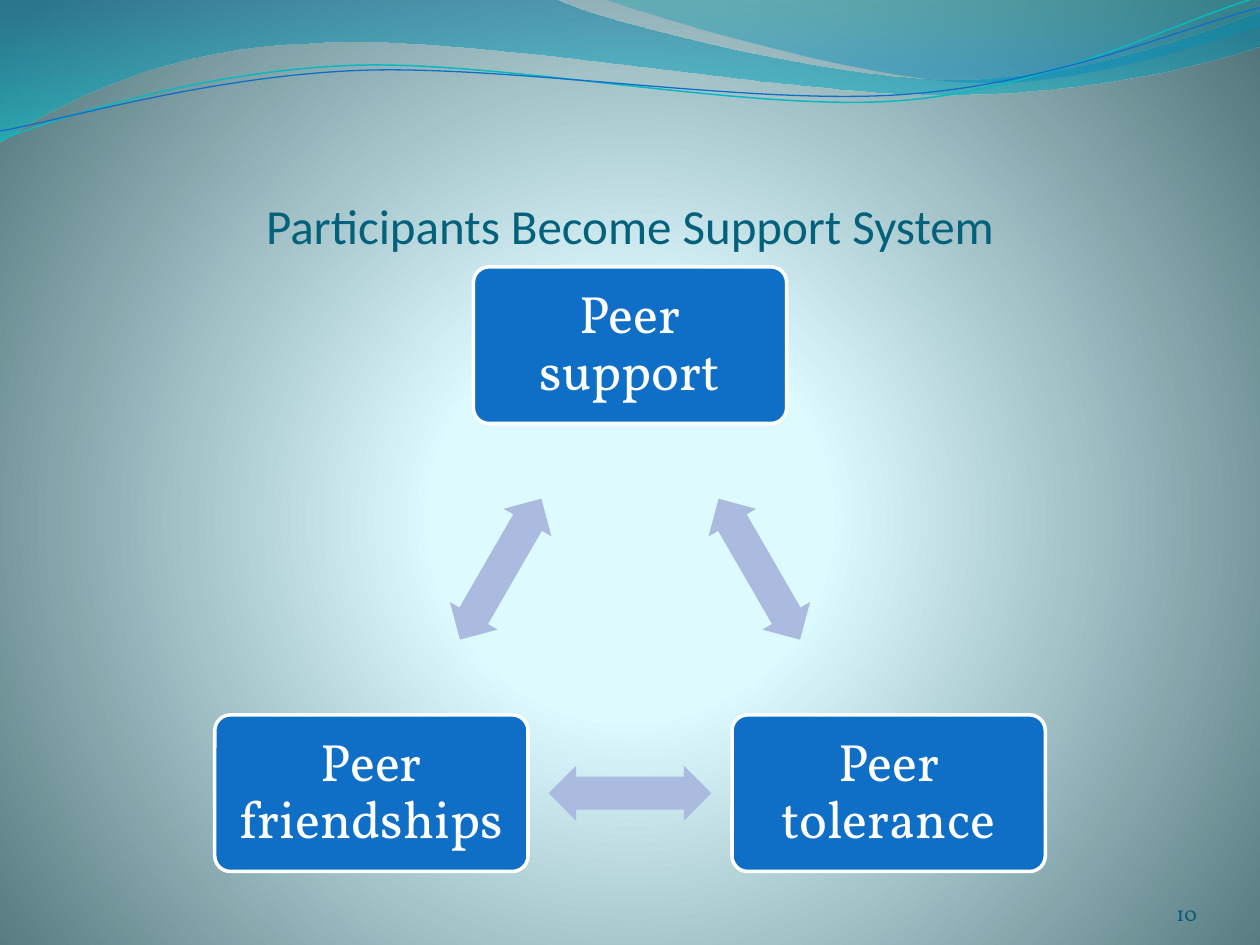
from math import cos, sin, radians
from lxml import etree
from pptx import Presentation
from pptx.dml.color import RGBColor
from pptx.enum.shapes import MSO_SHAPE as Shp
from pptx.enum.text import MSO_ANCHOR as Anchor, PP_ALIGN as Align
from pptx.oxml.ns import qn
from pptx.util import Pt

TILT = -2.7  # degrees, for the two thin lines

BACK = [(0, "DEFBFF", 100), (25, "DDFAFF", 100), (100, "52767C", 100)]
BANDS = [  # gradient stops, then start, curves (six numbers) and lines (two), in inches
    ([(0, "0074A1", 45), (100, "00C6CF", 55)],
     [(0, 0), (4.4, -.01), (4.76, .17, 6.64, .63, 7.58, .63),
      (8.53, .63, 9.58, .26, 10, .09), (10.01, .36),
      (9.83, .44, 8.7, .76, 7.46, .75), (6.22, .75, 3.82, .28, 2.57, .34),
      (1.29, .36, .46, .83, -.01, 1.13)]),
    ([(0, "00A1A9", 30), (80, "008BBF", 45)],
     [(4.79, -.01), (5.09, .11, 6.82, .62, 7.69, .65),
      (8.56, .69, 9.61, .32, 10, .21), (10, 0)]),
]
LINES = [  # colour, width, centre, path
    ("0AB8BF", .85, (4.99, .57),
     [(0, 1.11), (.48, .93, 1.58, .57, 2.77, .52),
      (3.95, .47, 5.93, .89, 7.13, .8), (8.33, .71, 9.38, .15, 9.98, -.02)]),
    ("0F6FC6", .75, (5, .59),
     [(0, 1.04), (.47, .96, 1.64, .61, 2.83, .56),
      (4.03, .51, 5.97, .84, 7.17, .75), (8.36, .67, 9.41, .21, 10, .06)]),
]


def rgb(code):
    return RGBColor.from_string(code)


def shade(fill, owner, stops, circle=False):
    """Give owner a gradient: downward, or spreading from a circle."""
    fill.gradient()
    old = owner.find(qn("a:gradFill"))
    new = etree.Element(qn("a:gradFill"), rotWithShape="1")
    items = etree.SubElement(new, qn("a:gsLst"))
    for pos, code, alpha in stops:
        stop = etree.SubElement(items, qn("a:gs"), pos=str(pos * 1000))
        tint = etree.SubElement(stop, qn("a:srgbClr"), val=code)
        etree.SubElement(tint, qn("a:alpha"), val=str(alpha * 1000))
    if circle:
        way = etree.SubElement(new, qn("a:path"), path="circle")
        etree.SubElement(way, qn("a:fillToRect"), l="10000", t="110000", r="10000", b="100000")
    else:
        etree.SubElement(new, qn("a:lin"), ang="5400000", scaled="0")
    owner.replace(old, new)


def pairs(seg):
    return list(zip(seg[::2], seg[1::2]))


def spin(path, centre, angle):
    """Turn every point of a path about its centre, clockwise."""
    c, s = cos(radians(angle)), sin(radians(angle))
    mx, my = centre
    return [[n for x, y in pairs(seg)
             for n in (mx + (x - mx) * c - (y - my) * s, my + (x - mx) * s + (y - my) * c)]
            for seg in path]


def outline(slide, path, close):
    """Join the end points with lines, then bend those that are curves."""
    segs = [[(Pt(x * 72), Pt(y * 72)) for x, y in pairs(seg)] for seg in path]
    pen = slide.shapes.build_freeform(*segs[0][0], scale=1.0)
    pen.add_line_segments([seg[-1] for seg in segs[1:]], close=close)
    shape = pen.convert_to_shape()
    shape.shadow.inherit = False
    for seg, line in zip(segs[1:], list(shape._element.iter(qn("a:lnTo")))):
        if len(seg) == 1:
            continue
        bend = etree.Element(qn("a:cubicBezTo"))
        for x, y in seg:
            etree.SubElement(bend, qn("a:pt"), x=str(x - shape.left), y=str(y - shape.top))
        line.getparent().replace(line, bend)
    return shape


def add_waves(slide):
    for stops, path in BANDS:
        band = outline(slide, path, True)
        shade(band.fill, band._element.spPr, stops)
        band.line.fill.background()
    for code, width, centre, path in LINES:
        wave = outline(slide, spin(path, centre, -TILT), False)
        wave.rotation = TILT
        wave.fill.background()
        wave.line.color.rgb = rgb(code)
        wave.line.width = Pt(width)


def write(shape, text, font, size, code, align, anchor, pads):
    frame = shape.text_frame
    frame.word_wrap = True
    frame.vertical_anchor = anchor
    frame.margin_left, frame.margin_top, frame.margin_right, frame.margin_bottom = map(Pt, pads)
    frame.text = text
    para = frame.paragraphs[0]
    para.alignment = align
    para.font.name, para.font.size = font, Pt(size)
    para.font.color.rgb = rgb(code)
    return para


def add_title(slide, left, top, width, height):
    title = slide.shapes.title
    title.left, title.top, title.width, title.height = map(Pt, (left, top, width, height))
    write(title, "Participants Become Support System", "Calibri", 28, "04617B",
          Align.CENTER, Anchor.BOTTOM, (0, 3.6, 0, 0))


def add_number(slide, left, top, width, height):
    box = slide.shapes.add_textbox(*map(Pt, (left, top, width, height)))
    write(box, "10", "Vollkorn", 12, "045D75", Align.RIGHT, Anchor.BOTTOM, (0, 0, 0, 0))


def add_cycle(slide, left, top, width, height, names):
    """Place boxes evenly on a ring, with a double arrow between neighbours."""
    wide, high = 179, 89.5
    turn = 360 / len(names)
    ring = (height - high) / (1 - cos(radians(turn)))
    mid_x, mid_y = left + width / 2, top + high / 2 + ring

    def place(kind, angle, far, w, h, code):
        x = mid_x + far * cos(radians(angle))
        y = mid_y + far * sin(radians(angle))
        shape = slide.shapes.add_shape(kind, Pt(x - w / 2), Pt(y - h / 2), Pt(w), Pt(h))
        shape.shadow.inherit = False
        shape.fill.solid()
        shape.fill.fore_color.rgb = rgb(code)
        return shape

    for i, name in enumerate(names):
        angle = i * turn - 90
        box = place(Shp.ROUNDED_RECTANGLE, angle, ring, wide, high, "0F6FC6")
        box.adjustments[0] = .1
        box.line.color.rgb = rgb("FFFFFF")
        box.line.width = Pt(2)
        para = write(box, name, "Vollkorn", 30, "FFFFFF", Align.CENTER, Anchor.MIDDLE, [7] * 4)
        para.line_spacing = .9

        angle += turn / 2
        arrow = place(Shp.LEFT_RIGHT_ARROW, angle, ring * cos(radians(turn / 2)),
                      93, 31.5, "ABBBDF")
        arrow.adjustments[0], arrow.adjustments[1] = .6, .5
        arrow.rotation = angle + 90
        arrow.line.fill.background()


def main():
    deck = Presentation()
    deck.slide_width, deck.slide_height = Pt(720), Pt(540)
    slide = deck.slides.add_slide(deck.slide_layouts[5])
    shade(slide.background.fill, slide._element.cSld.bg.bgPr, BACK, circle=True)
    add_waves(slide)
    add_title(slide, 36, 55.5, 648, 90)
    add_number(slide, 624, 500.5, 60, 28.5)
    add_cycle(slide, 122.5, 152.5, 475, 345.5,
              ["Peer support", "Peer tolerance", "Peer friendships"])
    deck.save("out.pptx")


if __name__ == "__main__":
    main()
